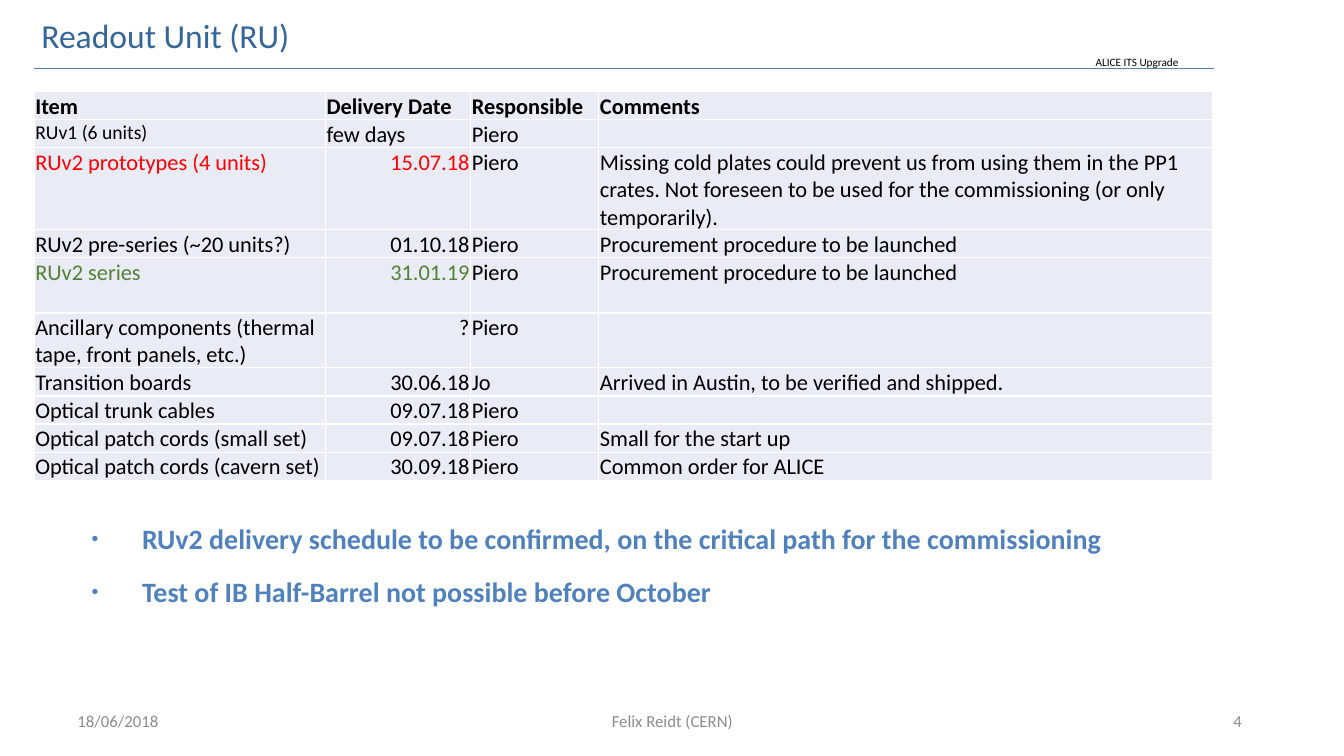
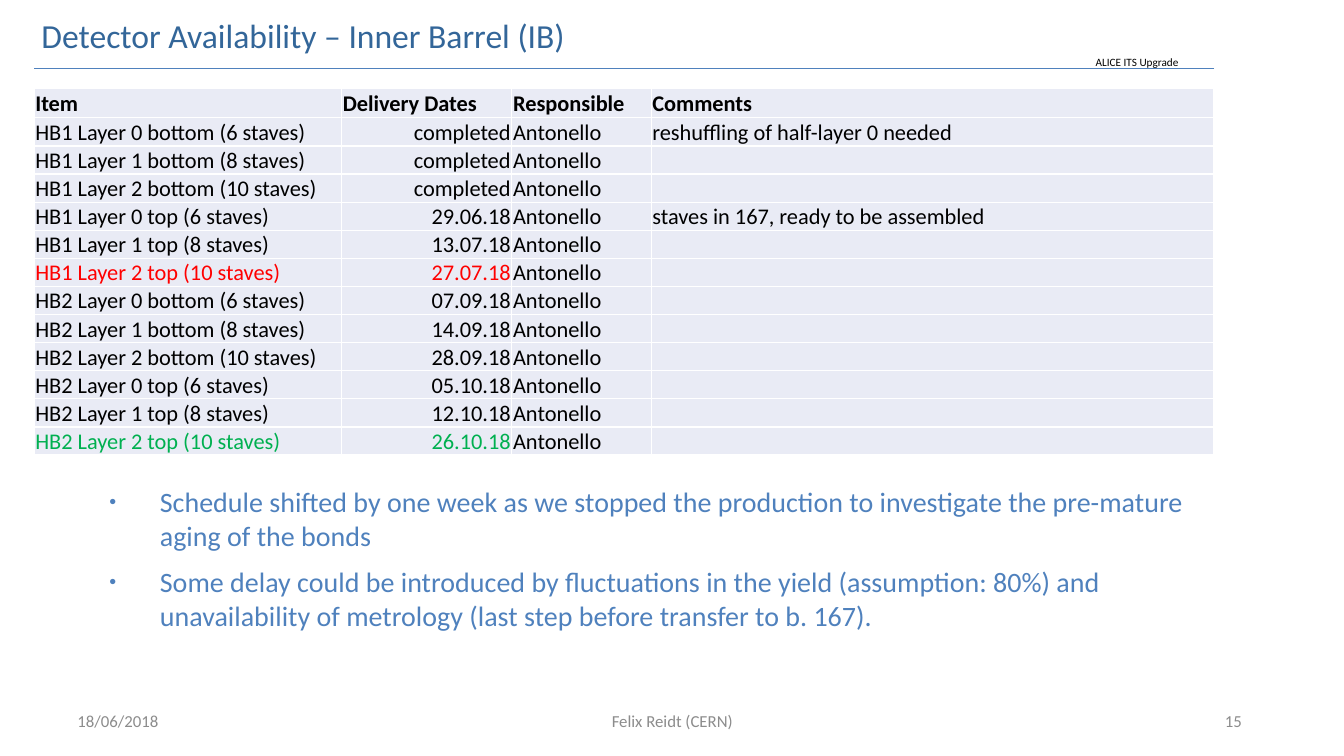
"""Build two slides on the readout unit and inner barrel schedules."""
from dataclasses import dataclass

from lxml.etree import SubElement as Sub
from pptx import Presentation
from pptx.dml.color import RGBColor as Rgb
from pptx.enum.shapes import MSO_CONNECTOR as Link
from pptx.enum.text import MSO_ANCHOR as Anchor, MSO_AUTO_SIZE as Fit, PP_ALIGN as Align
from pptx.oxml.ns import qn
from pptx.util import Cm, Pt


@dataclass(frozen=True)
class Theme:
    font: str = "Calibri"
    title: str = "336699"
    blue: str = "4F81BD"
    black: str = "000000"
    grey: str = "8C8C8C"
    red: str = "FF0000"
    olive: str = "548235"
    green: str = "00B050"
    cell: str = "E9EBF5"
    white: str = "FFFFFF"
    head: int = 24
    body: int = 20
    grid: int = 16
    small: int = 14
    foot: int = 12
    tag: int = 8


class Deck:
    def __init__(self, theme):
        self.theme = theme
        self.show = Presentation()
        self.show.slide_width, self.show.slide_height = Cm(33.87), Cm(19.05)
        self.slide = None

    def style(self, para, size, color, bold=False, align=Align.LEFT):
        para.alignment = align
        for run in para.runs:
            font = run.font
            font.name, font.size, font.bold = self.theme.font, Pt(size), bold
            font.color.rgb = Rgb.from_string(color)

    def place(self, shape, left, top, width, height):
        shape.left, shape.top = Cm(left), Cm(top)
        shape.width, shape.height = Cm(width), Cm(height)

    def label(self, text, box, size, color, align=Align.LEFT, anchor=Anchor.TOP, wrap=True):
        frame = self.slide.shapes.add_textbox(*map(Cm, box)).text_frame
        frame.text = text
        frame.word_wrap, frame.vertical_anchor = wrap, anchor
        self.style(frame.paragraphs[0], size, color, align=align)

    def title(self, text, width):
        shape = self.slide.shapes.title
        self.place(shape, 0.79, 0.25, width, 1.27)
        frame = shape.text_frame
        frame.text = text
        frame.word_wrap, frame.auto_size = False, Fit.SHAPE_TO_FIT_TEXT
        frame.vertical_anchor = Anchor.TOP
        self.style(frame.paragraphs[0], self.theme.head, self.theme.title)

    def rule(self):
        line = self.slide.shapes.add_connector(
            Link.STRAIGHT, Cm(30.6), Cm(1.73), Cm(0.86), Cm(1.73))
        line.line.color.rgb = Rgb.from_string(self.theme.blue)
        line.line.width = Pt(0.5)
        Sub(line._element.spPr, qn("a:effectLst"))

    def page(self, title, width, number):
        look = self.theme
        self.slide = self.show.slides.add_slide(self.show.slide_layouts[5])
        self.title(title, width)
        self.rule()
        self.label("ALICE ITS Upgrade", (27.36, 1.27, 2.62, 0.61),
                   look.tag, look.black, wrap=False)
        for text, left, span, align in (
                ("18/06/2018", 1.7, 7.9, Align.LEFT),
                ("Felix Reidt (CERN)", 11.23, 11.43, Align.CENTER),
                (str(number), 23.93, 7.62, Align.RIGHT)):
            self.label(text, (left, 17.65, span, 1.02),
                       look.foot, look.grey, align, Anchor.MIDDLE)

    def list(self, items, box, bold=False, pitch=None):
        frame = self.slide.shapes.add_textbox(*map(Cm, box)).text_frame
        frame.text = "\n".join(items)
        frame.word_wrap = True
        for spot, para in enumerate(frame.paragraphs):
            para.level = 1
            props = para._p.get_or_add_pPr()
            props.set("marL", str(Cm(2.54)))
            props.set("indent", str(Cm(-1.27)))
            Sub(props, qn("a:buSzPct"), val="70000")
            Sub(props, qn("a:buFont"), typeface="Arial")
            Sub(props, qn("a:buChar"), char="•")
            if spot:
                para.space_before = Pt(9)
            if pitch:
                para.line_spacing = pitch
            self.style(para, self.theme.body, self.theme.blue, bold)

    def frame_cell(self, cell):
        cell.fill.solid()
        cell.fill.fore_color.rgb = Rgb.from_string(self.theme.cell)
        cell.margin_left = cell.margin_right = cell.margin_top = Cm(0.03)
        cell.margin_bottom = 0
        props = cell._tc.get_or_add_tcPr()
        for spot, side in enumerate(("lnL", "lnR", "lnT", "lnB")):
            edge = Sub(props, qn(f"a:{side}"), w=str(Pt(1)))
            Sub(Sub(edge, qn("a:solidFill")), qn("a:srgbClr"), val=self.theme.white)
            props.insert(spot, edge)

    def table(self, rows, top, cols, heights, tints, left_dates=(0,), small=()):
        look = self.theme
        grid = self.slide.shapes.add_table(
            len(rows), len(cols), Cm(0.86), Cm(top), Cm(sum(cols)), Cm(sum(heights))).table
        grid.horz_banding = False
        for col, width in zip(grid.columns, cols):
            col.width = Cm(width)
        for y, (row, height) in enumerate(zip(rows, heights)):
            grid.rows[y].height = Cm(height)
            for x, text in enumerate(row):
                cell = grid.cell(y, x)
                self.frame_cell(cell)
                cell.text_frame.text = text
                para = cell.text_frame.paragraphs[0]
                color = tints.get(y, look.black) if x < 2 else look.black
                size = look.small if (y, x) in small else look.grid
                align = Align.RIGHT if x == 1 and y not in left_dates else Align.LEFT
                self.style(para, size, color, y == 0, align)
                if not text:
                    Sub(para._p, qn("a:endParaRPr"), sz=str(look.grid * 100))


def readout(deck):
    look = deck.theme
    deck.page("Readout Unit (RU)", 6.83, 4)
    launch = "Procurement procedure to be launched"
    rows = [
        ("Item", "Delivery Date", "Responsible", "Comments"),
        ("RUv1 (6 units)", "few days", "Piero", ""),
        ("RUv2 prototypes (4 units)", "15.07.18", "Piero",
         "Missing cold plates could prevent us from using them in the PP1 crates. "
         "Not foreseen to be used for the commissioning (or only temporarily)."),
        ("RUv2 pre-series (~20 units?)", "01.10.18", "Piero", launch),
        ("RUv2 series", "31.01.19", "Piero", launch),
        ("Ancillary components (thermal tape, front panels, etc.)", "?", "Piero", ""),
        ("Transition boards", "30.06.18", "Jo",
         "Arrived in Austin, to be verified and shipped."),
        ("Optical trunk cables", "09.07.18", "Piero", ""),
        ("Optical patch cords (small set)", "09.07.18", "Piero", "Small for the start up"),
        ("Optical patch cords (cavern set)", "30.09.18", "Piero", "Common order for ALICE"),
    ]
    tall = {2: 2.06, 4: 1.39, 5: 1.37}
    deck.table(rows, 2.31, (7.34, 3.66, 3.23, 15.47),
               [tall.get(y, 0.7) for y in range(len(rows))],
               {2: look.red, 4: look.olive}, (0, 1), {(1, 0)})
    deck.list(["RUv2 delivery schedule to be confirmed, on the critical path for the commissioning",
               "Test of IB Half-Barrel not possible before October"],
              (0.79, 12.85, 29.97, 2.57), True, 1.2)


def barrel(deck):
    look = deck.theme
    deck.page("Detector Availability – Inner Barrel (IB)", 13.82, 15)
    names = [f"HB{half} Layer {layer} {side} ({count} staves)"
             for half in (1, 2) for side in ("bottom", "top")
             for layer, count in enumerate((6, 8, 10))]
    dates = ["completed"] * 3 + ["29.06.18", "13.07.18", "27.07.18", "07.09.18", "14.09.18",
                                 "28.09.18", "05.10.18", "12.10.18", "26.10.18"]
    notes = {0: "reshuffling of half-layer 0 needed", 3: "staves in 167, ready to be assembled"}
    rows = [("Item", "Delivery Dates", "Responsible", "Comments")]
    rows += [(name, date, "Antonello", notes.get(y, ""))
             for y, (name, date) in enumerate(zip(names, dates))]
    deck.table(rows, 2.24, (7.75, 4.29, 3.51, 14.17), [0.73] + [0.7] * len(names),
               {6: look.red, 12: look.green})
    deck.list(["Schedule shifted by one week as we stopped the production to investigate "
               "the pre-mature aging of the bonds",
               "Some delay could be introduced by fluctuations in the yield (assumption: 80%) "
               "and unavailability of metrology (last step before transfer to b. 167)."],
              (1.24, 12.09, 29.97, 3.99))


def main():
    deck = Deck(Theme())
    readout(deck)
    barrel(deck)
    deck.show.save("out.pptx")


if __name__ == "__main__":
    main()
